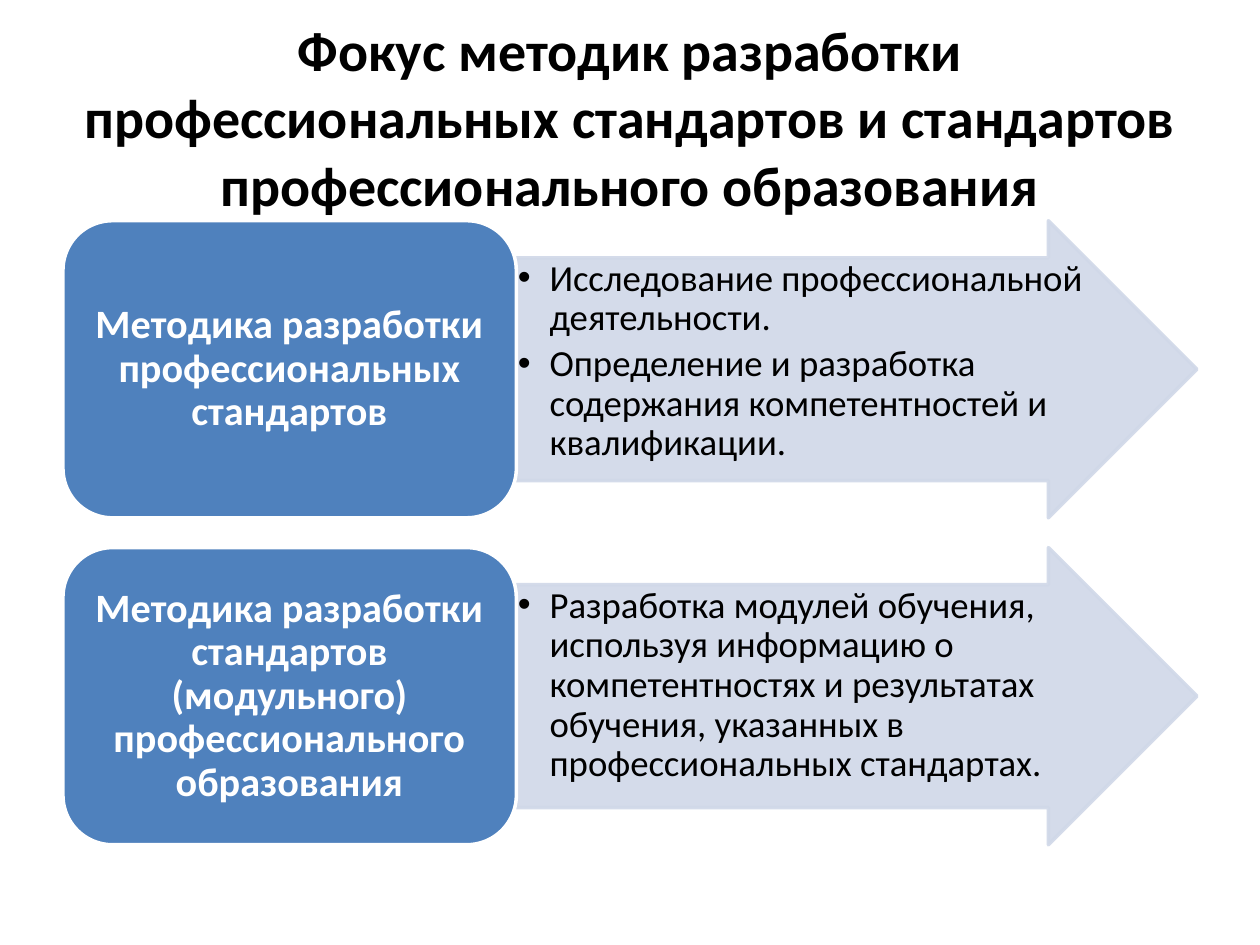
"""Build a slide pairing two standards methodologies with what each focuses on."""
from lxml import etree
from pptx import Presentation
from pptx import util as u
from pptx.dml.color import RGBColor
from pptx.enum import shapes, text
from pptx.oxml.ns import qn

TITLE = ("Фокус методик разработки профессиональных стандартов "
         "и стандартов профессионального образования")
ROWS = [
    ("Методика разработки профессиональных стандартов",
     ["Исследование профессиональной деятельности.",
      "Определение и разработка содержания компетентностей и квалификации."]),
    ("Методика разработки стандартов (модульного) профессионального образования",
     ["Разработка модулей обучения, используя информацию о компетентностях "
      "и результатах обучения, указанных в профессиональных стандартах."]),
]
LEFT, TOP, HEIGHT, PITCH = 1.27, 4.45, 5.99, 6.59
BOX_W, ARROW_W, POINTS_W = 9.14, 13.72, 11.48
SHAFT = 0.75
BLACK, WHITE, BLUE, PALE = "000000", "FFFFFF", "4F81BD", "D0D8E8"


def paint(fill, color, alpha=None):
    fill.solid()
    fill.fore_color.rgb = RGBColor.from_string(color)
    if alpha:
        clr = fill._xPr.find(qn("a:solidFill"))[0]
        etree.SubElement(clr, qn("a:alpha")).set("val", str(alpha * 1000))


def add_block(s, kind, left, top, width, fill, line, alpha=None):
    sp = s.shapes.add_shape(kind, u.Cm(left), u.Cm(top), u.Cm(width), u.Cm(HEIGHT))
    sp.shadow.inherit = False
    sp.line.width = u.Pt(2)
    paint(sp.fill, fill, alpha)
    paint(sp.line.fill, line, alpha)
    return sp


def set_frame(tf, anchor, side, end):
    tf.word_wrap = True
    tf.vertical_anchor = anchor
    tf.margin_left = tf.margin_right = u.Cm(side)
    tf.margin_top = tf.margin_bottom = u.Cm(end)


def write(p, words, size, color, bold, align):
    p.alignment = align
    r = p.add_run()
    r.text = words
    r.font.name = "Calibri"
    r.font.size = u.Pt(size)
    r.font.bold = bold
    r.font.color.rgb = RGBColor.from_string(color)


def add_bullet(p):
    p.level = 1
    p.line_spacing = 0.9
    p.space_after = u.Pt(3.5)
    pPr = p._p.get_or_add_pPr()
    pPr.set("marL", str(u.Cm(0.64)))
    pPr.set("indent", str(u.Cm(-0.64)))
    etree.SubElement(pPr, qn("a:buFont")).set("typeface", "Arial")
    etree.SubElement(pPr, qn("a:buChar")).set("char", "•")


def add_points(s, left, top, points):
    tb = s.shapes.add_textbox(u.Cm(left), u.Cm(top + HEIGHT * (1 - SHAFT) / 2),
                              u.Cm(POINTS_W), u.Cm(HEIGHT * SHAFT))
    tf = tb.text_frame
    set_frame(tf, text.MSO_ANCHOR.TOP, 0.03, 0.03)
    for i, point in enumerate(points):
        p = tf.add_paragraph() if i else tf.paragraphs[0]
        add_bullet(p)
        write(p, point, 21, BLACK, False, text.PP_ALIGN.LEFT)


def add_row(s, top, method, points):
    arrow = add_block(s, shapes.MSO_SHAPE.RIGHT_ARROW, LEFT + BOX_W, top,
                      ARROW_W, PALE, PALE, 90)
    arrow.adjustments[0], arrow.adjustments[1] = SHAFT, 0.5
    add_points(s, LEFT + BOX_W, top, points)
    box = add_block(s, shapes.MSO_SHAPE.ROUNDED_RECTANGLE, LEFT, top,
                    BOX_W, BLUE, WHITE)
    tf = box.text_frame
    set_frame(tf, text.MSO_ANCHOR.MIDDLE, 0.25, 0.13)
    p = tf.paragraphs[0]
    p.line_spacing = 0.9
    write(p, method, 23, WHITE, True, text.PP_ALIGN.CENTER)


def main():
    prs = Presentation()
    prs.slide_width, prs.slide_height = u.Cm(25.4), u.Cm(19.05)
    s = prs.slides.add_slide(prs.slide_layouts[5])
    title = s.shapes.title
    title.left, title.top = u.Cm(LEFT), u.Cm(0.76)
    title.width, title.height = u.Cm(22.86), u.Cm(3.18)
    tf = title.text_frame
    tf.auto_size = text.MSO_AUTO_SIZE.NONE
    tf.vertical_anchor = text.MSO_ANCHOR.MIDDLE
    write(tf.paragraphs[0], TITLE, 32, BLACK, True, text.PP_ALIGN.CENTER)
    for i, (method, points) in enumerate(ROWS):
        add_row(s, TOP + i * PITCH, method, points)
    prs.save("out.pptx")


if __name__ == "__main__":
    main()
